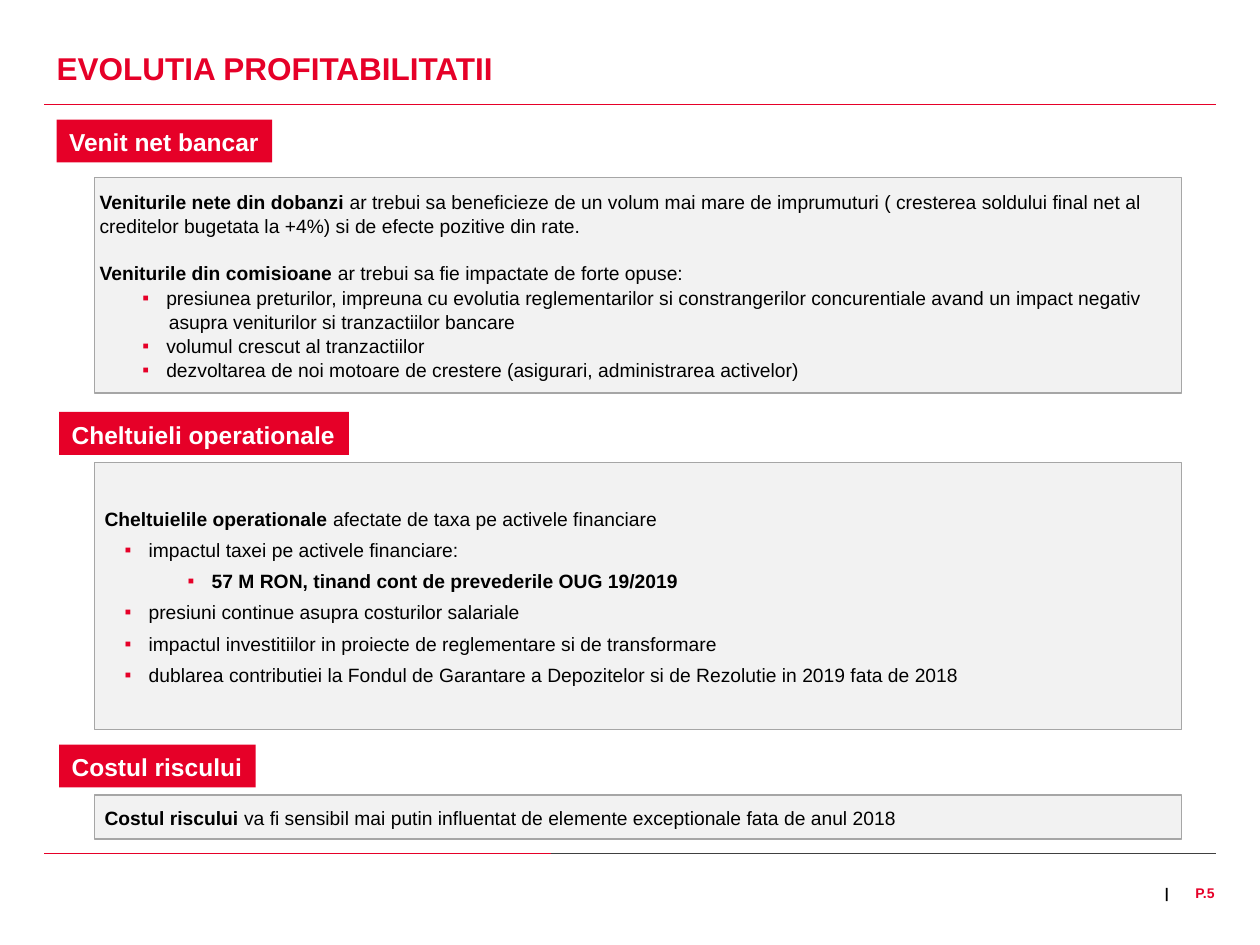
from dataclasses import dataclass

from lxml.etree import SubElement
from pptx import Presentation
from pptx.dml.color import RGBColor
from pptx.enum.shapes import MSO_CONNECTOR as Connector, MSO_SHAPE as Shape
from pptx.enum.text import MSO_ANCHOR as Anchor, MSO_AUTO_SIZE as AutoSize, PP_ALIGN as Align
from pptx.oxml.ns import qn
from pptx.util import Emu, Inches, Pt

RED = RGBColor(0xE6, 0x00, 0x28)
PALE = RGBColor(0xF2, 0xF2, 0xF2)
GREY = RGBColor(0xA6, 0xA6, 0xA6)
DARK = RGBColor(0x40, 0x40, 0x40)
BLACK = RGBColor(0, 0, 0)
WHITE = RGBColor(0xFF, 0xFF, 0xFF)
FONT = "Arial"
LINE_SPACING = 1.05
HANGING = 0.19

# Grid of 100 columns and 75 rows
COLS, ROWS = 100, 75
WIDTH, HEIGHT = Inches(10), Inches(7.5)
PANEL_LEFT, PANEL_COLS = 7.5, 86.3
LABEL_ROWS = 3.4
RULE_LEFT, RULE_RIGHT = 3.5, 96.5


@dataclass
class Line:
    text: str
    bold: str = ""
    indent: float = 0.08
    bullet: bool = False
    before: float = 0


@dataclass
class Section:
    label: str
    label_left: float
    label_top: float
    label_cols: float
    panel_top: float
    panel_rows: float
    lines: list[Line]
    after: float = 0


SECTIONS = [
    Section("Venit net bancar", 4.5, 9.5, 17.1, 14.1, 17.1, [
        Line("ar trebui sa beneficieze de un volum mai mare de imprumuturi "
             "( cresterea soldului final net al", "Veniturile nete din dobanzi ", 0.04),
        Line("creditelor bugetata la +4%) si de efecte pozitive din rate.", indent=0.04),
        Line("ar trebui sa fie impactate de forte opuse:",
             "Veniturile din comisioane ", 0.04, before=13.2),
        Line("presiunea preturilor, impreuna cu evolutia reglementarilor si constrangerilor "
             "concurentiale avand un impact negativ", indent=0.57, bullet=True),
        Line("asupra veniturilor si tranzactiilor bancare", indent=0.59),
        Line("volumul crescut al tranzactiilor", indent=0.57, bullet=True),
        Line("dezvoltarea de noi motoare de crestere (asigurari, administrarea activelor)",
             indent=0.57, bullet=True),
    ]),
    Section("Cheltuieli operationale", 4.7, 32.7, 23, 36.7, 21.2, [
        Line("afectate de taxa pe activele financiare", "Cheltuielile operationale "),
        Line("impactul taxei pe activele financiare:", indent=0.43, bullet=True),
        Line("", "57 M RON, tinand cont de prevederile OUG 19/2019", 0.93, True),
        Line("presiuni continue asupra costurilor salariale", indent=0.43, bullet=True),
        Line("impactul investitiilor in proiecte de reglementare si de transformare",
             indent=0.43, bullet=True),
        Line("dublarea contributiei la Fondul de Garantare a Depozitelor si de Rezolutie "
             "in 2019 fata de 2018", indent=0.43, bullet=True),
    ], after=4),
    Section("Costul riscului", 4.7, 59.1, 15.6, 63.1, 3.5, [
        Line("va fi sensibil mai putin influentat de elemente exceptionale fata de anul 2018",
             "Costul riscului "),
    ]),
]


def col(n: float) -> Emu:
    return Emu(round(WIDTH * n / COLS))


def row(n: float) -> Emu:
    return Emu(round(HEIGHT * n / ROWS))


def place(left: float, top: float, cols: float, rows: float) -> tuple:
    return col(left), row(top), col(cols), row(rows)


def style(font, size: float, color: RGBColor, bold: bool) -> None:
    font.name, font.size, font.bold = FONT, Pt(size), bold
    font.color.rgb = color


def set_frame(tf, anchor=Anchor.TOP, margins=(0, 0, 0, 0), wrap=True) -> None:
    tf.auto_size, tf.word_wrap, tf.vertical_anchor = AutoSize.NONE, wrap, anchor
    tf.margin_left, tf.margin_top, tf.margin_right, tf.margin_bottom = map(Inches, margins)


def set_text(tf, text: str, size: float, color: RGBColor, align=Align.LEFT) -> None:
    tf.text = text
    p = tf.paragraphs[0]
    p.alignment = align
    style(p.runs[0].font, size, color, True)


def add_rule(s, left: float, right: float, y: float, color: RGBColor) -> None:
    line = s.shapes.add_connector(Connector.STRAIGHT, col(left), row(y), col(right), row(y))
    line.line.color.rgb, line.line.width = color, Pt(0.5)
    SubElement(line._element.spPr, qn("a:effectLst"))


def add_block(s, box: tuple, fill: RGBColor, border: RGBColor | None = None):
    sp = s.shapes.add_shape(Shape.RECTANGLE, *box)
    sp.shadow.inherit = False
    sp.fill.solid()
    sp.fill.fore_color.rgb = fill
    if border is None:
        sp.line.fill.background()
    else:
        sp.line.color.rgb, sp.line.width = border, Pt(0.75)
    return sp


def add_line(p, line: Line, after: float) -> None:
    p.alignment, p.line_spacing = Align.LEFT, LINE_SPACING
    p.space_before, p.space_after = Pt(line.before), Pt(after)
    pPr = p._p.get_or_add_pPr()
    pPr.set("marL", str(Inches(line.indent)))
    pPr.set("indent", str(-Inches(HANGING) if line.bullet else 0))
    if line.bullet:
        SubElement(SubElement(pPr, qn("a:buClr")), qn("a:srgbClr"), val=str(RED))
        SubElement(pPr, qn("a:buFont"), typeface=FONT)
        SubElement(pPr, qn("a:buChar"), char="▪")
    for text, bold in ((line.bold, True), (line.text, False)):
        if text:
            r = p.add_run()
            r.text = text
            style(r.font, 11, BLACK, bold)


def add_section(s, sec: Section) -> None:
    # Panel with its lines
    panel = add_block(s, place(PANEL_LEFT, sec.panel_top, PANEL_COLS, sec.panel_rows), PALE, GREY)
    tf = panel.text_frame
    set_frame(tf, Anchor.MIDDLE)
    for i, line in enumerate(sec.lines):
        add_line(tf.add_paragraph() if i else tf.paragraphs[0], line, sec.after)
    # Red label
    label = add_block(s, place(sec.label_left, sec.label_top, sec.label_cols, LABEL_ROWS), RED)
    set_frame(label.text_frame, margins=(0.1, 0.05, 0.1, 0.05), wrap=False)
    set_text(label.text_frame, sec.label, 14, WHITE)
    label.text_frame.paragraphs[0].line_spacing = LINE_SPACING


def add_footer_text(s, box: tuple, text: str, color: RGBColor, align) -> None:
    tf = s.shapes.add_textbox(*box).text_frame
    set_frame(tf)
    set_text(tf, text, 8, color, align)


def main() -> None:
    prs = Presentation()
    prs.slide_width, prs.slide_height = WIDTH, HEIGHT
    s = prs.slides.add_slide(prs.slide_layouts[5])

    # Title
    title = s.shapes.title
    title.left, title.top, title.width, title.height = place(4.5, 3.9, 91.7, 3)
    set_frame(title.text_frame, Anchor.MIDDLE, (0, 0, 0.07, 0))
    set_text(title.text_frame, "EVOLUTIA PROFITABILITATII", 18, RED)

    # Rules under the title and above the footer
    add_rule(s, RULE_LEFT, RULE_RIGHT, 8.3, RED)
    add_rule(s, RULE_LEFT, 43.7, 67.7, RED)
    add_rule(s, 43.7, RULE_RIGHT, 67.7, DARK)

    for sec in SECTIONS:
        add_section(s, sec)

    # Page number
    add_footer_text(s, place(92.2, 70.2, 0.8, 4.8), "|", BLACK, Align.CENTER)
    add_footer_text(s, place(92.5, 70.2, 3.9, 4.8), "P.5", RED, Align.RIGHT)

    prs.save("out.pptx")


if __name__ == "__main__":
    main()
